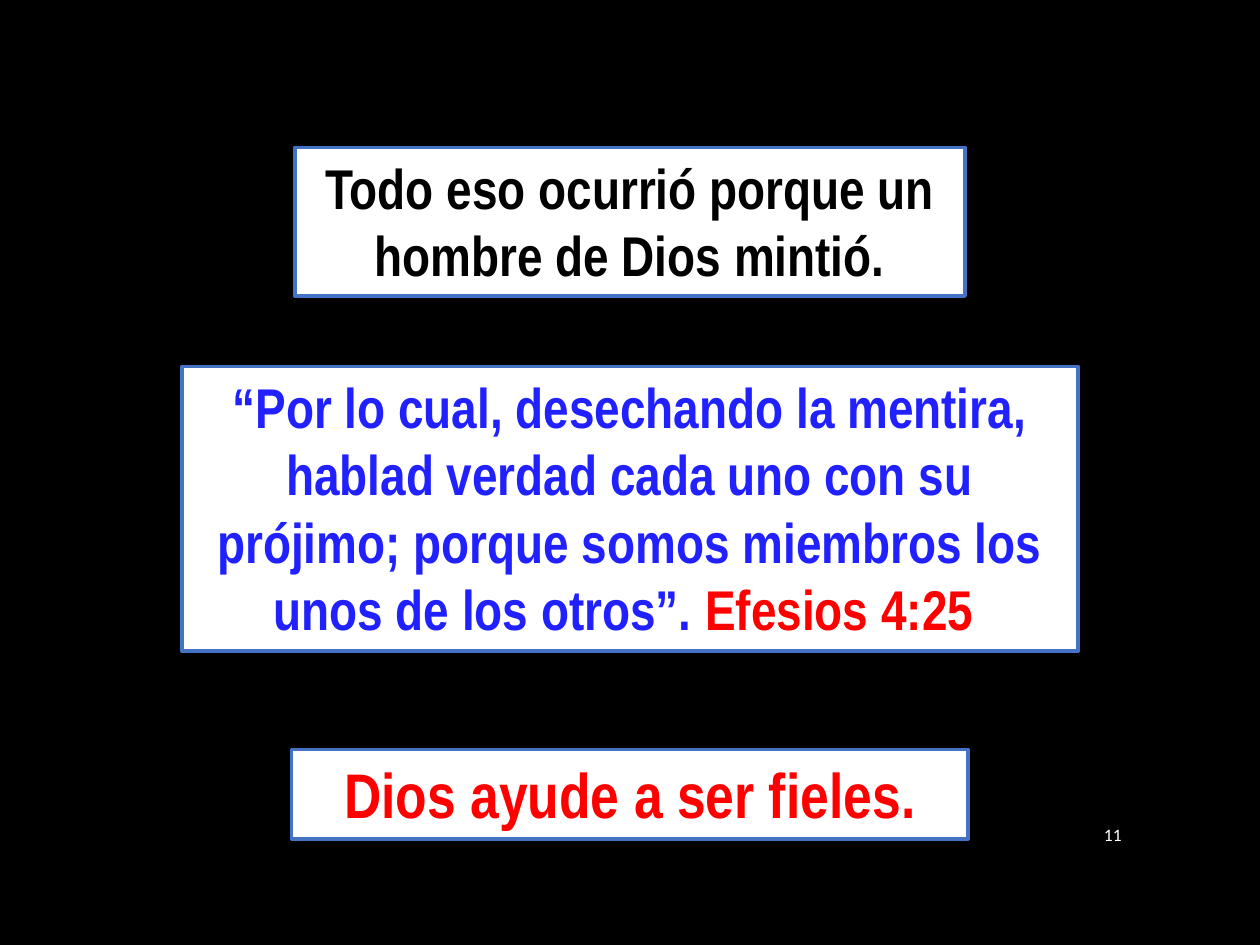
from pptx import Presentation
from pptx.dml.color import RGBColor
from pptx.enum.shapes import MSO_SHAPE
from pptx.enum.text import MSO_ANCHOR, MSO_AUTO_SIZE, PP_ALIGN
from pptx.oxml import parse_xml
from pptx.oxml.ns import nsdecls
from pptx.util import Cm, Pt

RECTANGLE = MSO_SHAPE.RECTANGLE
TOP, MIDDLE = MSO_ANCHOR.TOP, MSO_ANCHOR.MIDDLE
GROW = MSO_AUTO_SIZE.SHAPE_TO_FIT_TEXT
CENTER, RIGHT = PP_ALIGN.CENTER, PP_ALIGN.RIGHT

SLIDE_WIDTH, SLIDE_HEIGHT = 25.4, 19.05
BLACK, WHITE, RED = "000000", "FFFFFF", "FF0000"
VERSE_BLUE, BORDER_BLUE = "2121FF", "4472C4"


def color(hex_value):
    return RGBColor.from_string(hex_value)


def set_values(target, values):
    for name, value in values.items():
        setattr(target, name, value)


def add_span(para, text, hex_color, font_values):
    span = para.add_run()
    span.text = text
    set_values(span.font, font_values)
    span.font.color.rgb = color(hex_color)
    return span


def outline_span(span, hex_color):
    """Give the letters a thin outline in their own colour."""
    outline = parse_xml(
        f'<a:ln {nsdecls("a")} w="{Pt(0.75)}"><a:solidFill>'
        f'<a:srgbClr val="{hex_color}"/></a:solidFill></a:ln>'
    )
    span.font._element.insert(0, outline)


def add_message(page, top, width, height, size, spans):
    """Add a bordered white box, centred across the page."""
    left = (SLIDE_WIDTH - width) / 2
    box = page.shapes.add_shape(RECTANGLE, Cm(left), Cm(top), Cm(width), Cm(height))
    box.shadow.inherit = False
    box.fill.solid()
    box.fill.fore_color.rgb = color(WHITE)
    box.line.color.rgb = color(BORDER_BLUE)
    box.line.width = Pt(2)

    set_values(box.text_frame, {
        "word_wrap": True, "auto_size": GROW, "vertical_anchor": TOP,
    })
    para = box.text_frame.paragraphs[0]
    para.alignment = CENTER
    font_values = {"name": "Arial Narrow", "size": Pt(size), "bold": True}
    for text, hex_color in spans:
        span = add_span(para, text, hex_color, font_values)
        outline_span(span, hex_color)


def add_page_number(page, number):
    box = page.shapes.add_textbox(Cm(21.69), Cm(16.31), Cm(1.17), Cm(1.04))
    set_values(box.text_frame, {"word_wrap": True, "vertical_anchor": MIDDLE})
    para = box.text_frame.paragraphs[0]
    para.alignment = RIGHT
    add_span(para, number, WHITE, {"name": "Calibri", "size": Pt(10)})


def main():
    deck = Presentation()
    deck.slide_width, deck.slide_height = Cm(SLIDE_WIDTH), Cm(SLIDE_HEIGHT)
    page = deck.slides.add_slide(deck.slide_layouts[6])

    # Black background
    page.background.fill.solid()
    page.background.fill.fore_color.rgb = color(BLACK)

    # Conclusion, Bible verse and closing wish
    add_message(page, 2.97, 13.51, 3, 32, [
        ("Todo eso ocurrió porque un hombre de Dios mintió.", BLACK),
    ])
    add_message(page, 7.39, 18.06, 5.74, 32, [
        ("“Por lo cual, desechando la mentira, hablad verdad cada uno con su "
         "prójimo; porque somos miembros los unos de los otros”. ", VERSE_BLUE),
        ("Efesios 4:25 ", RED),
    ])
    add_message(page, 15.11, 13.64, 1.8, 36, [("Dios ayude a ser fieles.", RED)])

    add_page_number(page, "11")
    deck.save("out.pptx")


if __name__ == "__main__":
    main()
